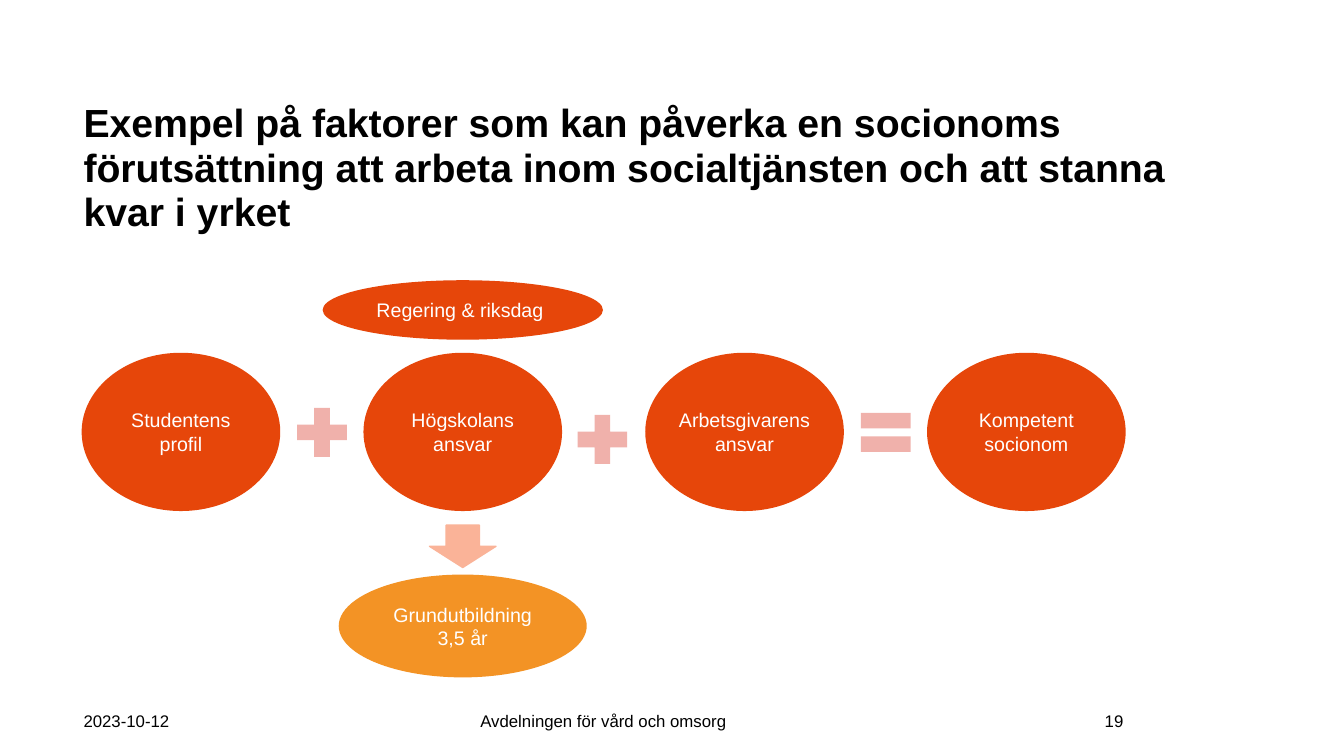
from dataclasses import dataclass

from pptx import Presentation
from pptx.dml.color import RGBColor
from pptx.enum.shapes import MSO_SHAPE
from pptx.enum.text import MSO_ANCHOR, PP_ALIGN
from pptx.shapes.autoshape import Shape
from pptx.slide import Slide
from pptx.text.text import TextFrame
from pptx.util import Inches, Pt

RED = "E6460A"
ORANGE = "F39325"
PEACH = "FAB398"
PINK = "F0B1AB"
WHITE = "FFFFFF"
BLACK = "000000"

FACTOR_LEFT, FACTOR_STEP, FACTOR_TOP = 0.81, 2.795, 3.5


@dataclass
class Bounds:
    left: float
    top: float
    width: float
    height: float

    def lengths(self) -> tuple[int, int, int, int]:
        return Inches(self.left), Inches(self.top), Inches(self.width), Inches(self.height)


@dataclass
class Oval:
    lines: list[str]
    bounds: Bounds
    color: str = RED
    side_inset: float = 0.1
    end_inset: float = 0.05


@dataclass
class Symbol:
    kind: MSO_SHAPE
    bounds: Bounds
    color: str = PINK


@dataclass
class Label:
    text: str
    bounds: Bounds
    size: float = 12
    align: PP_ALIGN = PP_ALIGN.LEFT
    anchor: MSO_ANCHOR = MSO_ANCHOR.MIDDLE
    bold: bool = False
    line_spacing: float = 1.0


def rgb(color: str) -> RGBColor:
    return RGBColor.from_string(color)


def write_lines(frame: TextFrame, lines: list[str], size: float, color: str,
                align: PP_ALIGN, bold: bool = False, line_spacing: float = 1.0) -> None:
    frame.word_wrap = True
    for index, line in enumerate(lines):
        para = frame.add_paragraph() if index else frame.paragraphs[0]
        para.alignment = align
        para.line_spacing = line_spacing
        span = para.add_run()
        span.text = line
        span.font.name = "Arial"
        span.font.size = Pt(size)
        span.font.bold = bold
        span.font.color.rgb = rgb(color)


def draw_symbol(page: Slide, symbol: Symbol) -> Shape:
    shape = page.shapes.add_shape(symbol.kind, *symbol.bounds.lengths())
    shape.shadow.inherit = False
    shape.fill.solid()
    shape.fill.fore_color.rgb = rgb(symbol.color)
    shape.line.fill.background()
    return shape


def draw_oval(page: Slide, oval: Oval) -> None:
    shape = draw_symbol(page, Symbol(MSO_SHAPE.OVAL, oval.bounds, oval.color))
    frame = shape.text_frame
    frame.vertical_anchor = MSO_ANCHOR.MIDDLE
    frame.margin_left = frame.margin_right = Inches(oval.side_inset)
    frame.margin_top = frame.margin_bottom = Inches(oval.end_inset)
    write_lines(frame, oval.lines, 14, WHITE, PP_ALIGN.CENTER)


def draw_label(page: Slide, label: Label) -> None:
    box = page.shapes.add_textbox(*label.bounds.lengths())
    box.text_frame.vertical_anchor = label.anchor
    write_lines(box.text_frame, [label.text], label.size, BLACK,
                label.align, label.bold, label.line_spacing)


def main() -> None:
    deck = Presentation()
    deck.slide_width, deck.slide_height = Inches(13.33), Inches(7.5)
    page = deck.slides.add_slide(deck.slide_layouts[6])

    title = Label(
        "Exempel på faktorer som kan påverka en socionoms förutsättning att arbeta "
        "inom socialtjänsten och att stanna kvar i yrket",
        Bounds(0.73, 0.96, 11.12, 1.35), size=28, anchor=MSO_ANCHOR.TOP,
        bold=True, line_spacing=0.95)
    footers = [
        Label("2023-10-12", Bounds(0.73, 6.95, 1.39, 0.4)),
        Label("Avdelningen för vård och omsorg", Bounds(2.69, 6.95, 6.59, 0.4),
              align=PP_ALIGN.CENTER),
        Label("19", Bounds(9.85, 6.95, 1.39, 0.4), align=PP_ALIGN.RIGHT),
    ]
    factors = ["Studentens profil", "Högskolans ansvar",
               "Arbetsgivarens ansvar", "Kompetent socionom"]
    ovals = [
        Oval(["Grundutbildning", "3,5 år"], Bounds(3.36, 5.7, 2.46, 1.02), ORANGE),
        Oval(["Regering & riksdag "], Bounds(3.2, 2.78, 2.78, 0.59), end_inset=0),
    ] + [
        Oval([factor], Bounds(FACTOR_LEFT + index * FACTOR_STEP, FACTOR_TOP, 1.97, 1.57),
             side_inset=0)
        for index, factor in enumerate(factors)
    ]
    operators = [
        Symbol(MSO_SHAPE.MATH_PLUS, Bounds(2.86, 3.96, 0.67, 0.66)),
        Symbol(MSO_SHAPE.MATH_PLUS, Bounds(5.64, 4.03, 0.67, 0.66)),
        Symbol(MSO_SHAPE.MATH_EQUAL, Bounds(8.45, 3.96, 0.67, 0.66)),
    ]

    draw_label(page, title)
    for oval in ovals:
        draw_oval(page, oval)
    arrow = draw_symbol(page, Symbol(MSO_SHAPE.DOWN_ARROW, Bounds(4.26, 5.21, 0.66, 0.42), PEACH))
    arrow.line.color.rgb = rgb(PEACH)
    arrow.line.width = Pt(1)
    for operator in operators:
        draw_symbol(page, operator)
    for footer in footers:
        draw_label(page, footer)

    deck.save("out.pptx")


if __name__ == "__main__":
    main()
